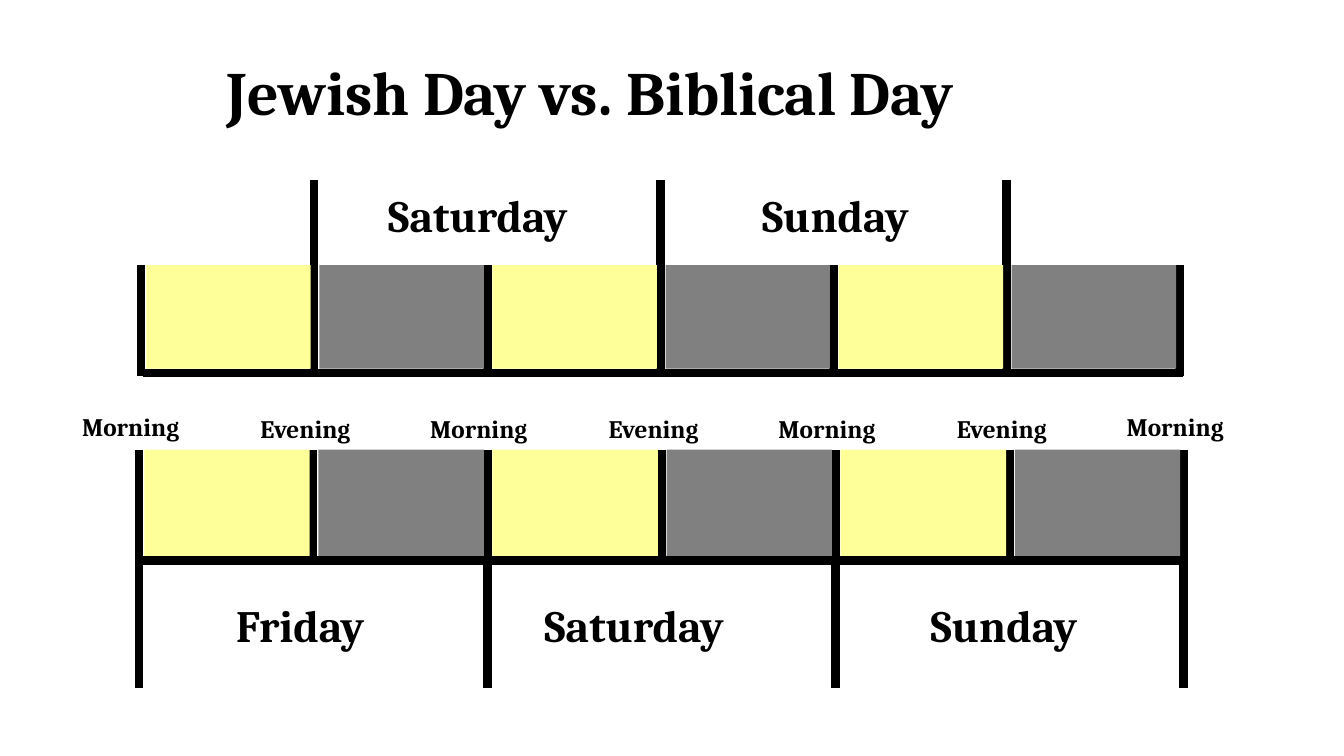
"""Builds a slide that compares the Jewish day with the Biblical day."""
import dataclasses

import lxml.etree
import pptx
import pptx.dml.color
import pptx.enum.shapes
import pptx.oxml.ns
import pptx.util

COLORS = {"ink": "000000", "daylight": "FFFF99", "night": "808080"}
FONT = "Cambria"
HALF_DAYS = 6


@dataclasses.dataclass
class Timeline:
    """A grid with one column for each half day and one row for the band."""
    left: float
    right: float
    top: float
    bottom: float

    def x(self, column):
        """Return the horizontal place of a column."""
        return pptx.util.Inches(self.left + column * (self.right - self.left) / HALF_DAYS)

    def y(self, row):
        """Return the vertical place of a row."""
        return pptx.util.Inches(self.top + row * (self.bottom - self.top))


def rgb(name):
    """Return a named colour."""
    return pptx.dml.color.RGBColor.from_string(COLORS[name])


def add_text(slide, text, left, top, width, height, size=32):
    """Add one bold line of text."""
    frame = slide.shapes.add_textbox(left, top, width, height).text_frame
    frame.word_wrap = True
    run = frame.paragraphs[0].add_run()
    run.text = text
    run.font.name = FONT
    run.font.size = pptx.util.Pt(size)
    run.font.bold = True
    run.font.color.rgb = rgb("ink")


def add_rule(slide, timeline, start, end):
    """Add a thick line between two (column, row) points."""
    rule = slide.shapes.add_connector(
        pptx.enum.shapes.MSO_CONNECTOR.STRAIGHT,
        timeline.x(start[0]), timeline.y(start[1]), timeline.x(end[0]), timeline.y(end[1]))
    rule.line.color.rgb = rgb("ink")
    rule.line.width = pptx.util.Pt(6)
    properties = rule._element.find(pptx.oxml.ns.qn("p:spPr"))
    lxml.etree.SubElement(properties, pptx.oxml.ns.qn("a:effectLst"))


def add_half_day(slide, timeline, column):
    """Fill a column as daylight or night."""
    left, top = timeline.x(column + 0.03), timeline.y(0)
    half_day = slide.shapes.add_shape(
        pptx.enum.shapes.MSO_SHAPE.RECTANGLE, left, top,
        timeline.x(column + 0.98) - left, timeline.y(0.96) - top)
    half_day.shadow.inherit = False
    half_day.fill.solid()
    half_day.fill.fore_color.rgb = rgb("night" if column % 2 else "daylight")
    half_day.line.fill.background()


def add_timeline(slide, timeline, baseline, dividers):
    """Draw the baseline, the dividers given as (top, bottom) rows, and the band."""
    add_rule(slide, timeline, (baseline[0], 1), (baseline[1], 1))
    for column, (top, bottom) in enumerate(dividers):
        add_rule(slide, timeline, (column, top), (column, bottom))
    for column in range(HALF_DAYS):
        add_half_day(slide, timeline, column)


def add_label(slide, timeline, text, column, row, columns, rows, size=32):
    """Add a text placed on the grid of a timeline."""
    left, top = timeline.x(column), timeline.y(row)
    add_text(slide, text, left, top, timeline.x(column + columns) - left,
             timeline.y(row + rows) - top, size=size)


def main():
    """Build the slide and save it."""
    deck = pptx.Presentation()
    deck.slide_width = pptx.util.Inches(13.33)
    deck.slide_height = pptx.util.Inches(7.5)
    slide = deck.slides.add_slide(deck.slide_layouts[6])

    biblical = Timeline(left=1.38, right=11.74, top=4.46, bottom=5.56)
    jewish = Timeline(left=1.4, right=11.7, top=2.63, bottom=3.7)
    edges = range(HALF_DAYS + 1)

    add_timeline(slide, biblical, (0, 5.98),
                 [(0, 1 if edge % 2 else 2.15) for edge in edges])
    for edge in edges:
        text, columns = ("Evening", 0.72) if edge % 2 else ("Morning", 0.77)
        row = -0.39 if edge in (0, HALF_DAYS) else -0.37
        add_label(slide, biblical, text, edge - columns / 2, row, columns, 0.36, size=18)
    for day, column, columns in (("Friday", 0.5, 1), ("Saturday", 2.27, 1.33),
                                 ("Sunday", 4.49, 1.12)):
        add_label(slide, biblical, day, column, 1.29, columns, 0.58)

    add_timeline(slide, jewish, (0.01, 6.02),
                 [(-0.79 if edge % 2 else 0, 1.03 if edge in (0, HALF_DAYS) else 1)
                  for edge in edges])
    for day, column, columns in (("Saturday", 1.37, 1.34), ("Sunday", 3.53, 1.12)):
        add_label(slide, jewish, day, column, -0.76, columns, 0.6)

    width, height = deck.slide_width, deck.slide_height
    add_text(slide, "Jewish Day vs. Biblical Day", int(width * 0.161), int(height * 0.065),
             int(width * 0.68), int(height * 0.11), size=44)
    deck.save("out.pptx")


if __name__ == "__main__":
    main()
